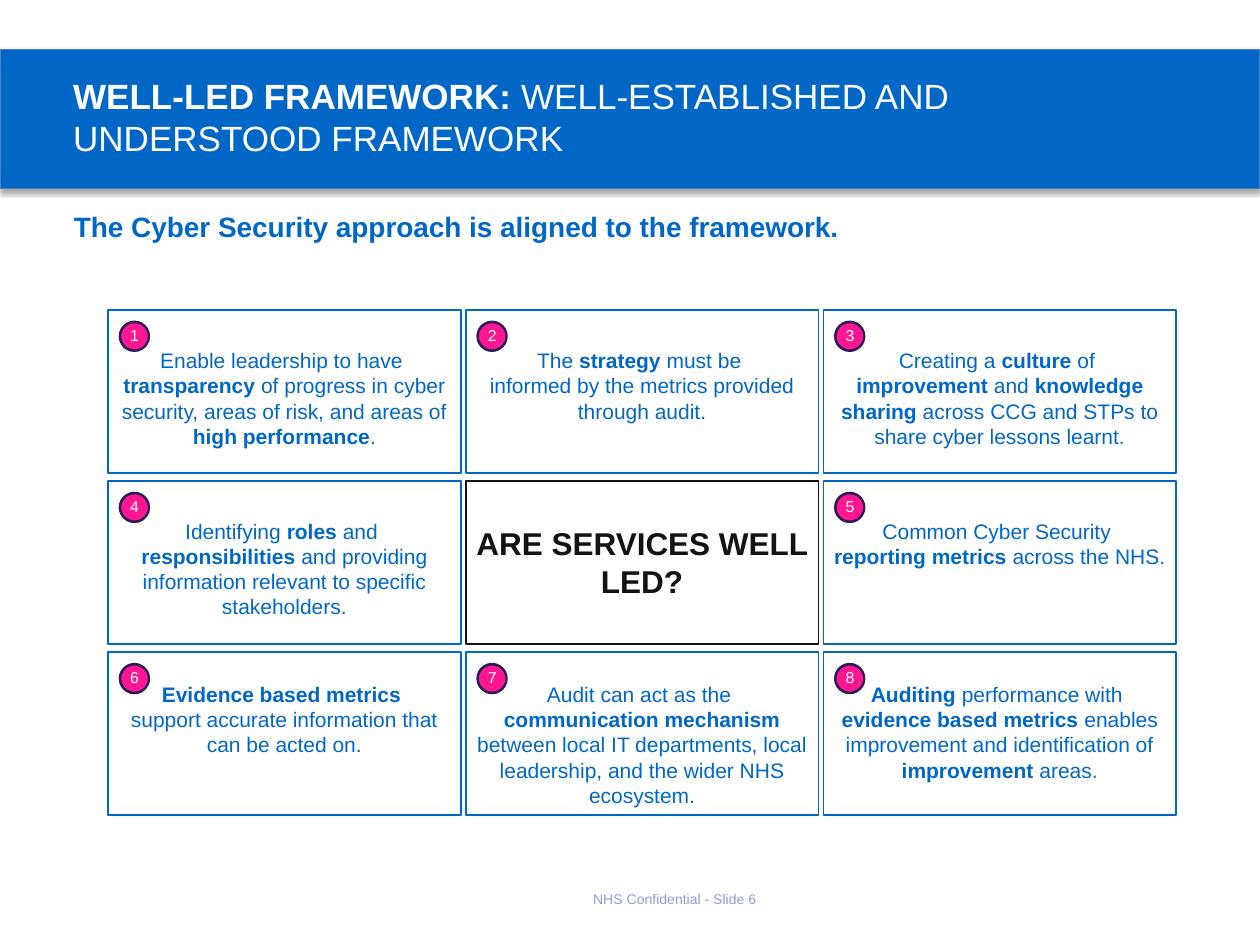
from dataclasses import dataclass
from typing import Any

from lxml import etree
from pptx import Presentation
from pptx.dml.color import RGBColor
from pptx.enum import shapes, text
from pptx.oxml.ns import qn
from pptx.util import Cm, Pt

BLUE = RGBColor(0x00, 0x67, 0xC6)
EDGE = RGBColor(0x4F, 0x81, 0xBD)
BLACK = RGBColor(0x14, 0x13, 0x13)
WHITE = RGBColor(0xFF, 0xFF, 0xFF)
PINK = RGBColor(0xFF, 0x16, 0x91)
PURPLE = RGBColor(0x2C, 0x1A, 0x5D)
PALE = RGBColor(0x8C, 0xA0, 0xD6)

RECT, OVAL = shapes.MSO_SHAPE.RECTANGLE, shapes.MSO_SHAPE.OVAL
CENTER = text.PP_ALIGN.CENTER
MIDDLE = text.MSO_ANCHOR.MIDDLE

# Grid of cells, in centimetres
LEFT, TOP, WIDTH, HEIGHT = 2.18, 6.25, 7.11, 3.28
STEP_X, STEP_Y = 7.21, 3.45
TEXT_DROP = (0.63, 0.62, 0.46)
BADGE = 0.58

# Text of each cell (** for bold, | for a line break) and first line outdent in cm
CELLS = [
    ("Enable leadership to have |**transparency** of progress in cyber security, "
     "areas of risk, and areas of **high performance**.", 0),
    ("The **strategy** must be |informed by the metrics provided through audit.", 1.05),
    ("Creating a **culture** of |**improvement** and **knowledge sharing** across "
     "CCG and STPs to share cyber lessons learnt.", 0.58),
    ("Identifying **roles** and |**responsibilities** and providing information "
     "relevant to specific stakeholders.", 0.35),
    ("**ARE SERVICES WELL LED?**", 0),
    ("Common Cyber Security |**reporting metrics** across the NHS.", 0.47),
    ("**Evidence based metrics** |support accurate information that can be acted on.", 0.94),
    ("Audit can act as the |**communication mechanism** between local IT departments, "
     "local leadership, and the wider NHS ecosystem.", 0.35),
    ("**Auditing** performance with |**evidence based metrics** enables improvement "
     "and identification of **improvement** areas.", 0.35),
]
CENTRE_CELL = 4


@dataclass
class Deck:
    slide: Any
    font: str = "Arial"

    def add_runs(self, p, marked, size, color):
        """Add runs to p: ** switches bold, | breaks the line."""
        for i, part in enumerate(marked.split("**")):
            for j, piece in enumerate(part.split("|")):
                if j:
                    p.add_line_break()
                if piece:
                    r = p.add_run()
                    r.text = piece
                    values = {"name": self.font, "size": Pt(size), "bold": i % 2 == 1}
                    for name, value in values.items():
                        setattr(r.font, name, value)
                    r.font.color.rgb = color

    def frame(self, sp, **values):
        """Format the text frame of sp and return its first paragraph."""
        tf = sp.text_frame
        for name, value in values.items():
            setattr(tf, name, value)
        return tf.paragraphs[0]

    def title(self, marked, x, y, w, h):
        sp = self.slide.shapes.title
        sp.left, sp.top, sp.width, sp.height = Cm(x), Cm(y), Cm(w), Cm(h)
        sp.fill.solid()
        sp.fill.fore_color.rgb = BLUE
        p = self.frame(sp, word_wrap=True, vertical_anchor=MIDDLE,
                       auto_size=text.MSO_AUTO_SIZE.NONE)
        p.alignment = text.PP_ALIGN.LEFT
        self.add_runs(p, marked, 20, WHITE)

    def shape(self, kind, x, y, w, h, fill=None, line=None, weight=1, parent=None):
        sp = (parent or self.slide).shapes.add_shape(kind, Cm(x), Cm(y), Cm(w), Cm(h))
        sp.shadow.inherit = False
        if fill is None:
            sp.fill.background()
        else:
            sp.fill.solid()
            sp.fill.fore_color.rgb = fill
        if line is None:
            sp.line.fill.background()
        else:
            sp.line.color.rgb = line
            sp.line.width = Pt(weight)
        return sp

    def banner(self, x, y, w, h):
        """Shadowed band that lies behind the title."""
        sp = self.shape(RECT, x, y, w, h, BLUE, EDGE, 0.75)
        effects = sp.element.spPr.find(qn("a:effectLst"))
        shadow = etree.SubElement(effects, qn("a:outerShdw"), blurRad=str(Pt(3.1)),
                                  dist=str(Pt(1.8)), dir="5400000", rotWithShape="0")
        color = etree.SubElement(shadow, qn("a:srgbClr"), val="000000")
        etree.SubElement(color, qn("a:alpha"), val="35000")
        self.slide.shapes.title.element.addprevious(sp.element)

    def label(self, marked, x, y, w, h, size, color, align=CENTER, **values):
        sp = self.slide.shapes.add_textbox(Cm(x), Cm(y), Cm(w), Cm(h))
        p = self.frame(sp, word_wrap=True, **values)
        p.alignment = align
        self.add_runs(p, marked, size, color)
        return p

    def cell(self, marked, outdent, x, y, drop, size=12, color=BLUE):
        self.shape(RECT, x, y, WIDTH, HEIGHT, line=color)
        margins = {f"margin_{side}": Cm(0.13) for side in ("left", "top", "right", "bottom")}
        p = self.label(marked, x, y + drop, WIDTH, 2.3, size, color,
                       auto_size=text.MSO_AUTO_SIZE.SHAPE_TO_FIT_TEXT, **margins)
        if outdent:
            p._p.get_or_add_pPr().set("indent", str(-Cm(outdent)))

    def badge(self, number, x, y):
        group = self.slide.shapes.add_group_shape()
        self.shape(OVAL, x, y, BADGE, BADGE, PINK, PURPLE, 1.5, group)
        sp = self.shape(OVAL, x + 0.03, y + 0.04, 0.53, 0.5, PINK, parent=group)
        p = self.frame(sp, word_wrap=False, vertical_anchor=MIDDLE, margin_left=0,
                       margin_top=0, margin_right=0, margin_bottom=0)
        p.alignment = CENTER
        p.line_spacing = 0.9
        self.add_runs(p, str(number), 9, WHITE)


def main():
    prs = Presentation()
    prs.slide_width, prs.slide_height = Cm(25.4), Cm(19.05)
    deck = Deck(prs.slides.add_slide(prs.slide_layouts[5]))

    deck.title("**WELL-LED FRAMEWORK: **WELL-ESTABLISHED AND UNDERSTOOD FRAMEWORK",
               1.22, 1.22, 18.67, 2.24)
    deck.banner(0, 1, 25.4, 2.8)
    p = deck.label("**The Cyber Security approach is aligned to the framework.**",
                   1.24, 4.04, 19.6, 1.63, 16, BLUE, text.PP_ALIGN.LEFT)
    p.line_spacing = 1.1

    badges = []
    for i, (marked, outdent) in enumerate(CELLS):
        row, col = divmod(i, 3)
        x, y = LEFT + col * STEP_X, TOP + row * STEP_Y
        if i == CENTRE_CELL:
            deck.cell(marked, outdent, x, y, 0.74, 18, BLACK)
        else:
            deck.cell(marked, outdent, x, y, TEXT_DROP[row])
            badges.append((x + 0.24, y + 0.24))
    for number, (x, y) in enumerate(badges, 1):
        deck.badge(number, x, y)

    deck.label("NHS Confidential - Slide 6", 11.61, 17.83, 3.99, 1.02, 8, PALE)
    prs.save("out.pptx")


if __name__ == "__main__":
    main()
